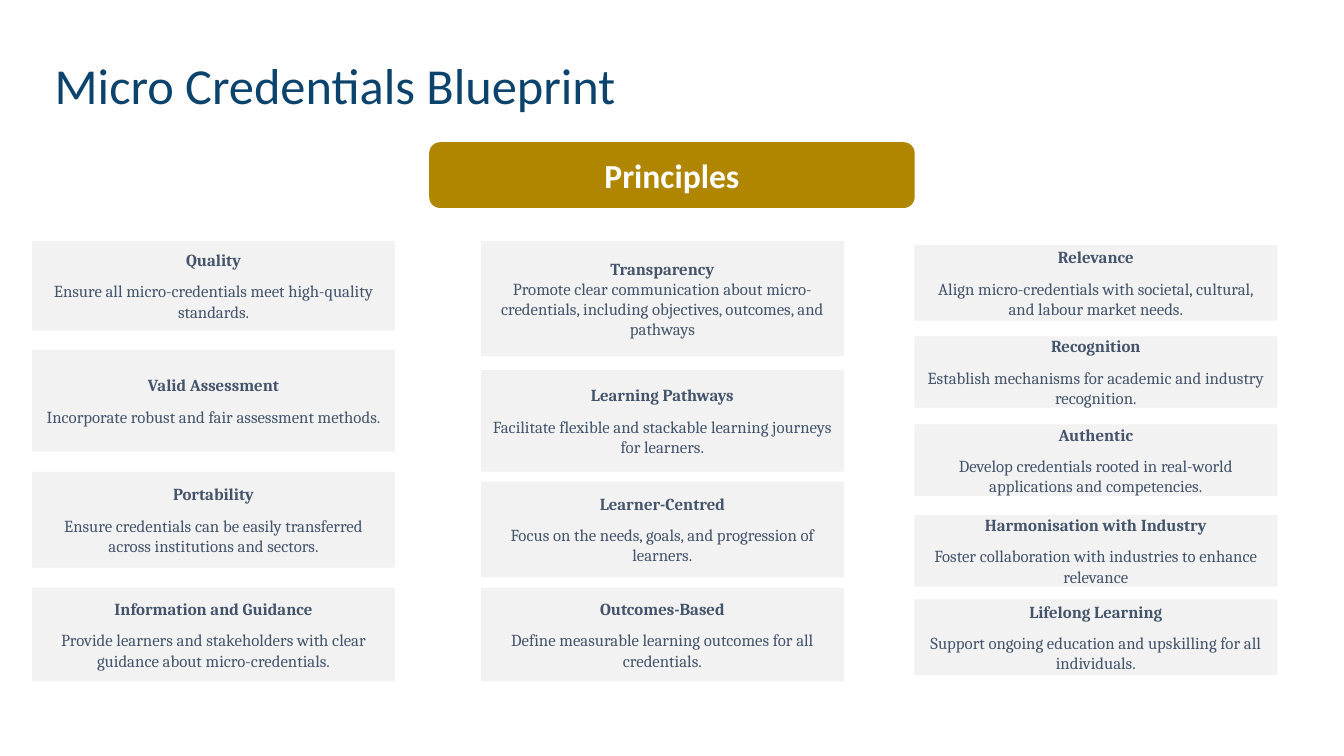
import pptx
import pptx.dml.color
import pptx.enum.shapes
import pptx.enum.text
import pptx.util

Pt = pptx.util.Pt
SHAPES = pptx.enum.shapes.MSO_SHAPE
ALIGN = pptx.enum.text.PP_ALIGN
MIDDLE = pptx.enum.text.MSO_ANCHOR.MIDDLE

NAVY, GOLD, WHITE, PALE, SLATE = "0B436D", "B08600", "FFFFFF", "F2F2F2", "44546A"
CARD_WIDTH = 259.2

# Each column: left edge, then cards as (top, height, heading, description)
COLUMNS = [
    (23, [
        (172, 64, "Quality", "Ensure all micro-credentials meet high-quality standards."),
        (250, 72.6, "Valid Assessment", "Incorporate robust and fair assessment methods."),
        (337, 68.4, "Portability",
         "Ensure credentials can be easily transferred across institutions and sectors."),
        (419.8, 67, "Information and Guidance",
         "Provide learners and stakeholders with clear guidance about micro-credentials."),
    ]),
    (343.6, [
        (172, 82.6, "Transparency",
         "Promote clear communication about micro-credentials, including objectives, "
         "outcomes, and pathways"),
        (264.4, 72.6, "Learning Pathways",
         "Facilitate flexible and stackable learning journeys for learners."),
        (344, 68.4, "Learner-Centred", "Focus on the needs, goals, and progression of learners."),
        (419.8, 67, "Outcomes-Based", "Define measurable learning outcomes for all credentials."),
    ]),
    (653.2, [
        (175, 54, "Relevance",
         "Align micro-credentials with societal, cultural, and labour market needs."),
        (240.2, 51, "Recognition",
         "Establish mechanisms for academic and industry recognition."),
        (303.2, 51, "Authentic",
         "Develop credentials rooted in real-world applications and competencies."),
        (367.8, 51, "Harmonisation with Industry",
         "Foster collaboration with industries to enhance relevance"),
        (428.2, 54, "Lifelong Learning",
         "Support ongoing education and upskilling for all individuals."),
    ]),
]


def color(hex_code):
    return pptx.dml.color.RGBColor.from_string(hex_code)


def write(paragraph, text, font="Cambria", size=12, ink=SLATE, bold=False,
          align=ALIGN.CENTER, after=0, spacing=1.0):
    run = paragraph.add_run()
    run.text = text
    run.font.name = font
    run.font.size = Pt(size)
    run.font.bold = bold
    run.font.color.rgb = color(ink)
    paragraph.alignment = align
    paragraph.space_after = Pt(after)
    paragraph.line_spacing = spacing


def panel(slide, kind, fill, left, top, width, height):
    """Add a filled, borderless shape and return its text frame."""
    shape = slide.shapes.add_shape(kind, Pt(left), Pt(top), Pt(width), Pt(height))
    shape.shadow.inherit = False
    shape.fill.solid()
    shape.fill.fore_color.rgb = color(fill)
    shape.line.fill.background()
    frame = shape.text_frame
    frame.word_wrap = True
    frame.vertical_anchor = MIDDLE
    return frame


def add_title(slide, left, top, width, height):
    frame = slide.shapes.add_textbox(Pt(left), Pt(top), Pt(width), Pt(height)).text_frame
    frame.word_wrap = True
    frame.vertical_anchor = MIDDLE
    write(frame.paragraphs[0], "Micro Credentials Blueprint", font="Calibri", size=36,
          ink=NAVY, align=ALIGN.LEFT, spacing=0.9)


def add_banner(slide, left, top, width, height):
    frame = panel(slide, SHAPES.ROUNDED_RECTANGLE, GOLD, left, top, width, height)
    write(frame.paragraphs[0], "Principles", font="Calibri", size=24, ink=WHITE, bold=True)


def add_column(slide, left, width, cards):
    for top, height, heading, description in cards:
        frame = panel(slide, SHAPES.RECTANGLE, PALE, left, top, width, height)
        # The longest description sits directly under its heading
        after = 0 if heading == "Transparency" else 8
        write(frame.paragraphs[0], heading, bold=True, after=after)
        write(frame.add_paragraph(), description, after=after)


def main():
    deck = pptx.Presentation()
    deck.slide_width, deck.slide_height = Pt(960), Pt(540)
    slide = deck.slides.add_slide(deck.slide_layouts[6])

    # Title and banner
    add_title(slide, 32, 10.8, 828, 104.4)
    add_banner(slide, 306.6, 101.6, 346.8, 47)

    # Principle cards
    for left, cards in COLUMNS:
        add_column(slide, left, CARD_WIDTH, cards)

    deck.save("out.pptx")


if __name__ == "__main__":
    main()
